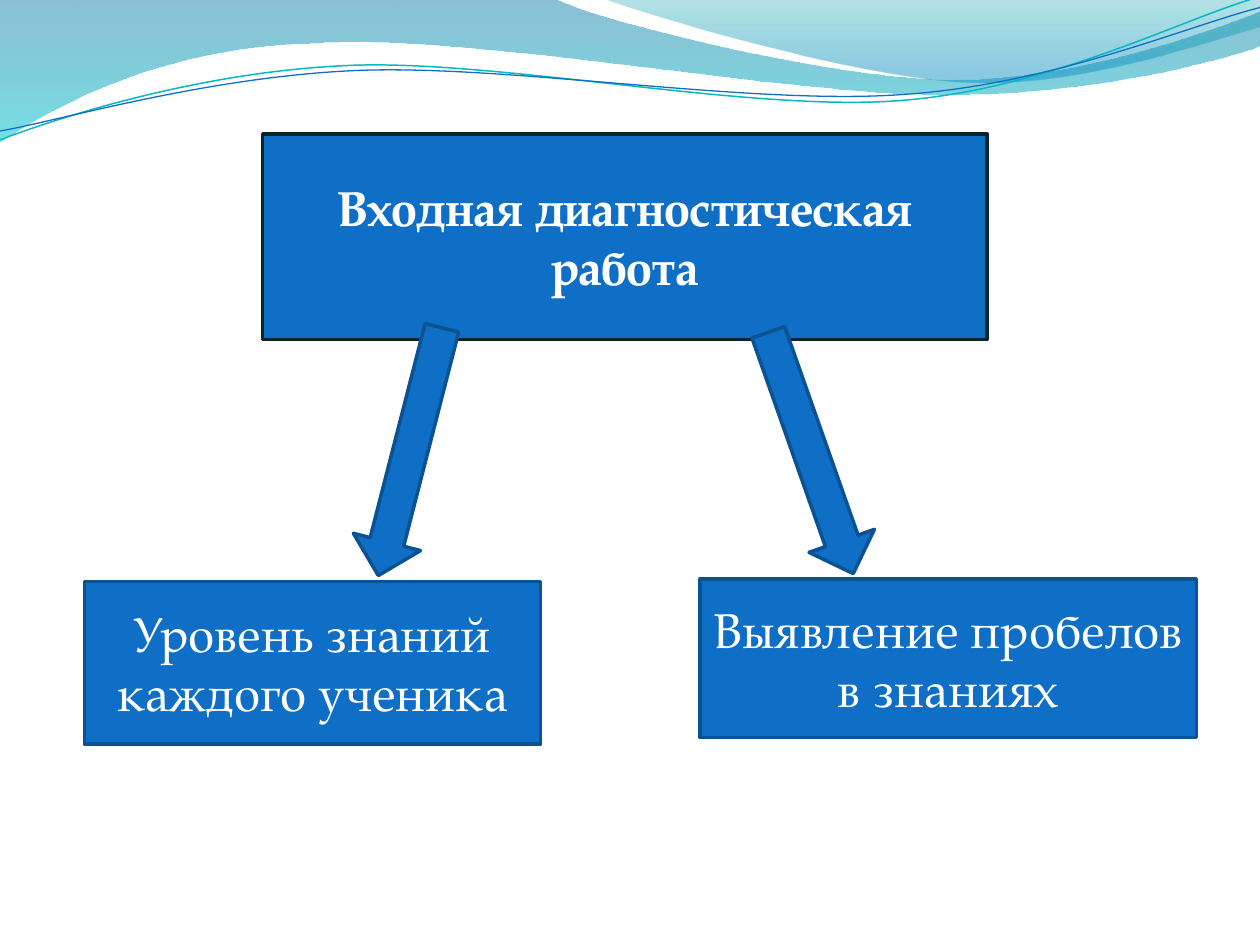
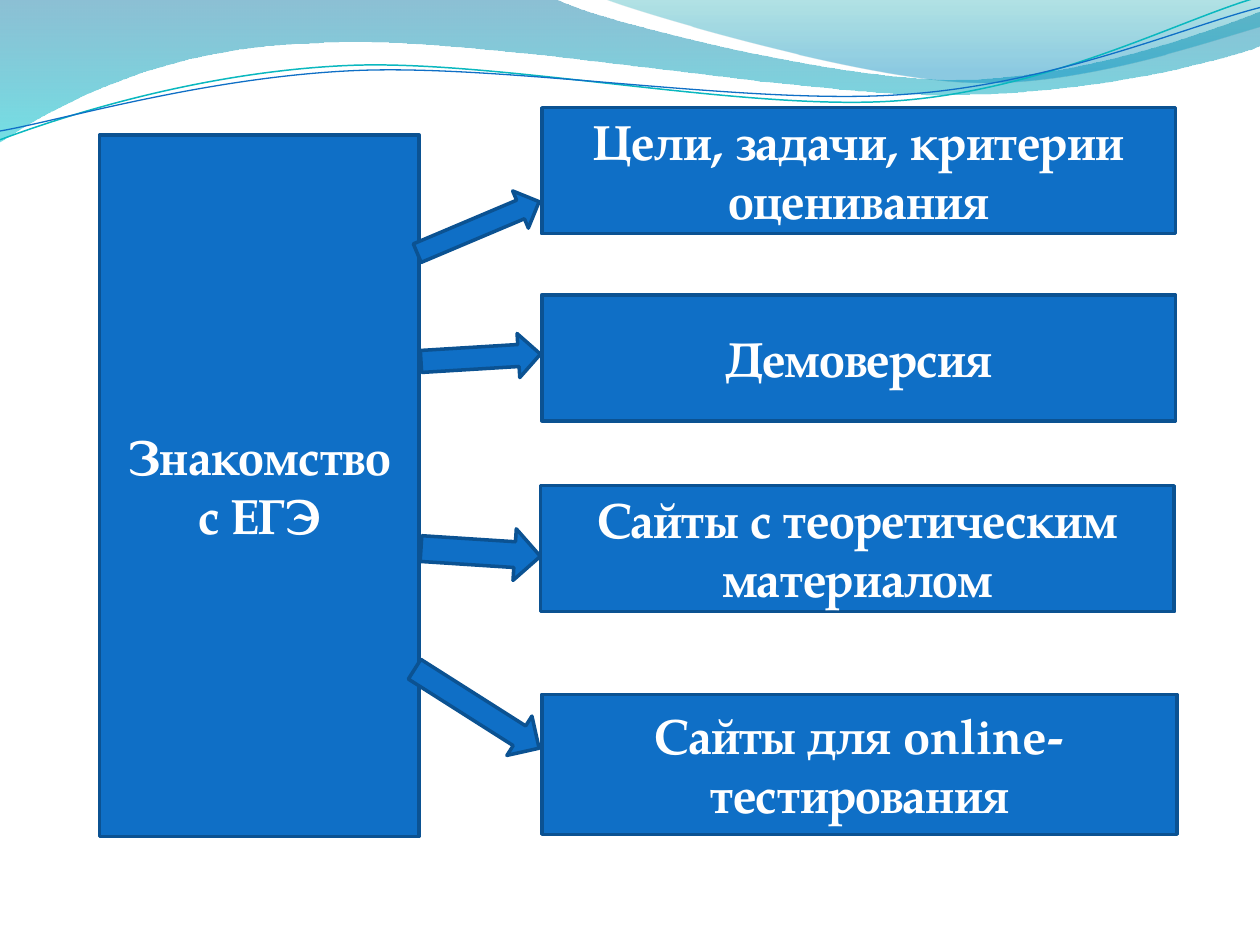
import pptx
import pptx.dml.color
import pptx.enum.shapes
import pptx.enum.text
import pptx.oxml
import pptx.oxml.ns
import pptx.util

WIDTH, HEIGHT = pptx.util.Inches(10), pptx.util.Inches(7.5)
COLUMN, ROW = WIDTH / 100, HEIGHT / 75
FONT = "TeX Gyre Pagella"
BLUE, EDGE, DARK_EDGE, TEAL, WHITE = "0F6FC6", "0B5292", "072428", "0AB8BF", "FFFFFF"
SHAPES = pptx.enum.shapes.MSO_SHAPE

# Each wave is a start point, then one point for a line or three for a curve.
BROAD_WAVE = [
    [(0, 0)], [(44, -0.1)],
    [(47.6, 1.7), (66.4, 6.3), (75.8, 6.3)],
    [(85.3, 6.3), (95.8, 2.6), (100, 0.9)],
    [(100.1, 3.6)],
    [(98.3, 4.4), (87, 7.6), (74.6, 7.5)],
    [(62.2, 7.5), (38.2, 2.8), (25.7, 3.4)],
    [(12.9, 3.6), (4.6, 8.3), (-0.1, 11.3)],
    [(0, 0)],
]
CORNER_WAVE = [
    [(47.9, -0.1)],
    [(50.9, 1.1), (68.2, 6.2), (76.9, 6.5)],
    [(85.6, 6.9), (96.1, 3.2), (100, 2.1)],
    [(100, 0)], [(47.9, -0.1)],
]
TEAL_WAVE = [
    [(0, 11.1)],
    [(4.8, 9.3), (15.8, 5.7), (27.7, 5.2)],
    [(39.5, 4.7), (59.3, 8.9), (71.3, 8)],
    [(83.3, 7.1), (93.8, 1.5), (99.8, -0.2)],
]
BLUE_WAVE = [
    [(0, 10.4)],
    [(4.7, 9.6), (16.4, 6.1), (28.3, 5.6)],
    [(40.3, 5.1), (59.7, 8.4), (71.7, 7.5)],
    [(83.6, 6.7), (94.1, 2.1), (100, 0.6)],
]


def colour(code):
    """Turn a hex string into a colour."""
    return pptx.dml.color.RGBColor.from_string(code)


def place(column, row):
    """Turn a grid position or extent into slide lengths."""
    return round(column * COLUMN), round(row * ROW)


def outline(shape, code, width):
    """Give a shape a plain coloured outline."""
    shape.line.color.rgb = colour(code)
    shape.line.width = pptx.util.Pt(width)


def write(shape, text, size=28, bold=False, code=WHITE):
    """Write centred text in a shape."""
    frame = shape.text_frame
    frame.word_wrap = True
    frame.vertical_anchor = pptx.enum.text.MSO_ANCHOR.MIDDLE
    paragraph = frame.paragraphs[0]
    paragraph.alignment = pptx.enum.text.PP_ALIGN.CENTER
    run = paragraph.add_run()
    run.text = text
    run.font.name = FONT
    run.font.size = pptx.util.Pt(size)
    run.font.bold = bold
    run.font.color.rgb = colour(code)


def add_block(slide, kind, left, top, width, height, edge=EDGE):
    """Add a blue preset shape on the grid."""
    block = slide.shapes.add_shape(kind, *place(left, top), *place(width, height))
    block.shadow.inherit = False
    block.fill.solid()
    block.fill.fore_color.rgb = colour(BLUE)
    outline(block, edge, 2)
    return block


def add_box(slide, text, *area, edge=EDGE, bold=True):
    """Add a blue rectangle with text."""
    write(add_block(slide, SHAPES.RECTANGLE, *area, edge=edge), text, bold=bold)


def add_arrow(slide, kind, angle, *area):
    """Add a turned block arrow."""
    add_block(slide, kind, *area).rotation = angle


def bend(shape, wave):
    """Join each three line steps of a wave's curves into one cubic curve."""
    steps = iter(list(shape.element.spPr.iter(pptx.oxml.ns.qn("a:lnTo"))))
    for part in wave[1:]:
        group = [next(steps) for _ in part]
        if len(group) == 3:
            curve = pptx.oxml.parse_xml(
                f'<a:cubicBezTo {pptx.oxml.ns.nsdecls("a")}/>')
            group[0].addprevious(curve)
            for step in group:
                curve.append(step[0])
                step.getparent().remove(step)


def add_wave(slide, wave, closed):
    """Draw a wave as a freeform."""
    start, *rest = [place(*point) for part in wave for point in part]
    builder = slide.shapes.build_freeform(*start)
    builder.add_line_segments(rest, close=closed)
    shape = builder.convert_to_shape()
    shape.shadow.inherit = False
    bend(shape, wave)
    return shape


def add_wave_band(slide, wave, stops):
    """Draw a wave filled from top to bottom with translucent colours."""
    band = add_wave(slide, wave, True)
    band.line.fill.background()
    band.fill.gradient()
    band.fill.gradient_angle = 270
    for stop, (position, code, _) in zip(band.fill.gradient_stops, stops):
        stop.position = position
        stop.color.rgb = colour(code)
    tints = band.element.spPr.iter(pptx.oxml.ns.qn("a:srgbClr"))
    for tint, (_, _, opacity) in zip(tints, stops):
        tint.append(pptx.oxml.parse_xml(
            f'<a:alpha {pptx.oxml.ns.nsdecls("a")} val="{opacity * 1000}"/>'))
    return band


def add_wave_line(slide, wave, code, width):
    """Draw a wave as a thin line."""
    line = add_wave(slide, wave, False)
    line.fill.background()
    outline(line, code, width)
    return line


def decorate(layout, slide):
    """Draw the waves on a slide and move them to its cleared layout."""
    for holder in list(layout.placeholders):
        layout.shapes.element.remove(holder.element)
    waves = [
        add_wave_band(slide, BROAD_WAVE, [(0, "0074A1", 45), (1, "00C6CF", 55)]),
        add_wave_band(slide, CORNER_WAVE, [(0, "00A1A9", 30), (0.8, "008BBF", 45)]),
        add_wave_line(slide, TEAL_WAVE, TEAL, 0.85),
        add_wave_line(slide, BLUE_WAVE, BLUE, 0.75),
    ]
    for wave in waves:
        layout.shapes.element.append(wave.element)


def build_diagnostics(slide):
    """Show what the entry test leads to."""
    add_box(slide, "Входная диагностическая работа", 20.85, 10.65, 57.5, 16.3, edge=DARK_EDGE)
    add_box(slide, "Уровень знаний каждого ученика", 6.7, 46.15, 36.2, 12.9, bold=False)
    add_box(slide, "Выявление пробелов в знаниях", 55.55, 45.95, 39.4, 12.6, bold=False)
    for angle, left, top in ((14.4, 29.8, 25.7), (340.6, 61.6, 25.8)):
        add_arrow(slide, SHAPES.DOWN_ARROW, angle, left, top, 5.5, 20.3)


def build_exam_introduction(slide):
    """Show the parts of the introduction to the exam."""
    add_box(slide, "Знакомство с ЕГЭ", 7.9, 10.7, 25.35, 55.7)
    topics = (
        ("Цели, задачи, критерии оценивания", 43, 8.55, 50.3, 10),
        ("Демоверсия", 43, 23.4, 50.3, 10),
        ("Сайты с теоретическим материалом", 42.9, 38.55, 50.3, 10),
        ("Сайты для online-тестирования", 43, 55.12, 50.4, 11.1),
    )
    for topic in topics:
        add_box(slide, *topic)
    arrows = (
        (337.1, 32.7, 16.45, 10.5, 3.2),
        (356.5, 33.4, 26.65, 9.5, 3.5),
        (3.7, 33.4, 41.8, 9.5, 4.1),
        (32.4, 32, 54.4, 11.7, 3.7),
    )
    for arrow in arrows:
        add_arrow(slide, SHAPES.RIGHT_ARROW, *arrow)


def main():
    """Build and save the presentation."""
    deck = pptx.Presentation()
    deck.slide_width, deck.slide_height = WIDTH, HEIGHT
    blank = deck.slide_layouts[6]
    diagnostics = deck.slides.add_slide(blank)
    decorate(blank, diagnostics)
    build_diagnostics(diagnostics)
    build_exam_introduction(deck.slides.add_slide(blank))
    deck.save("out.pptx")


if __name__ == "__main__":
    main()
